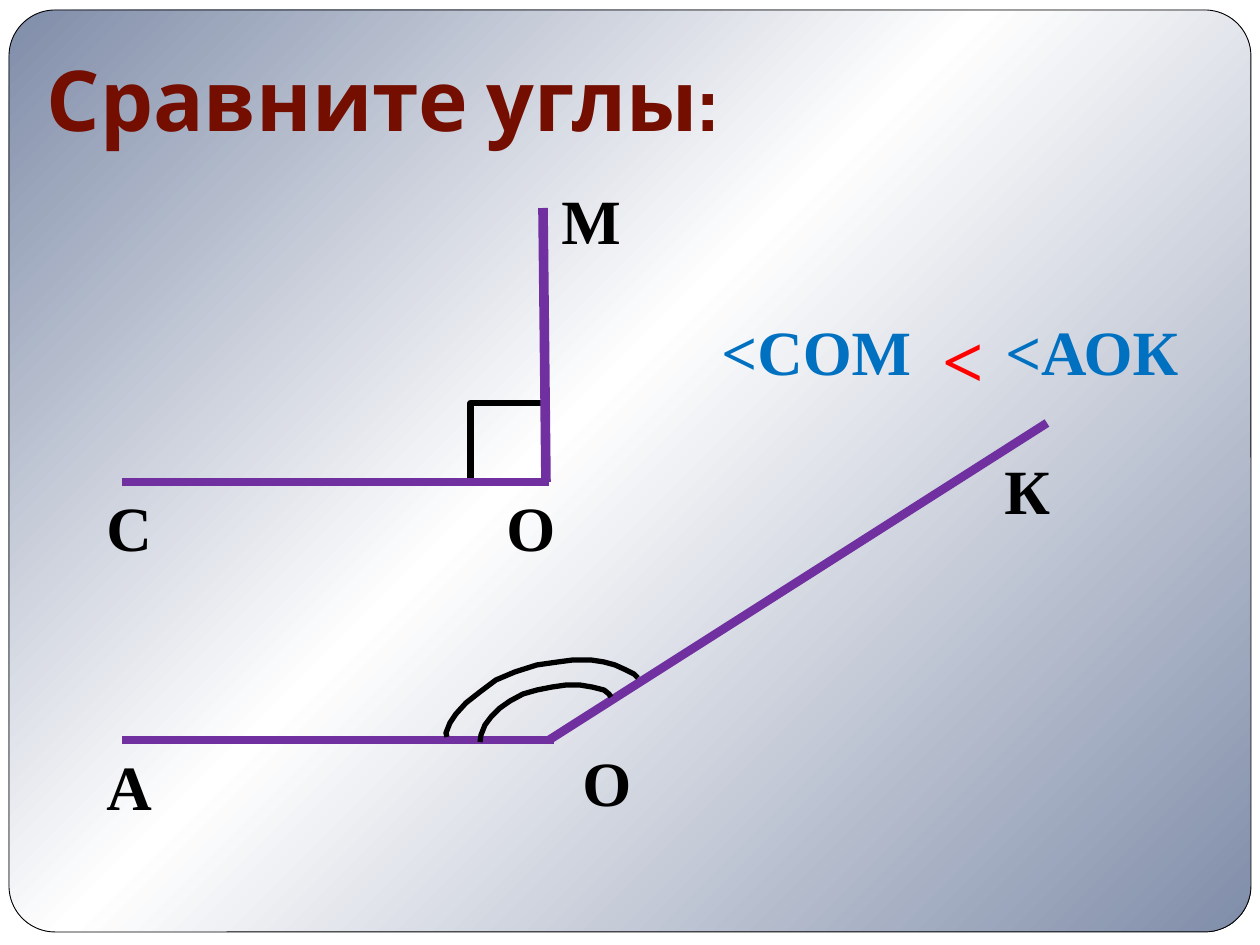
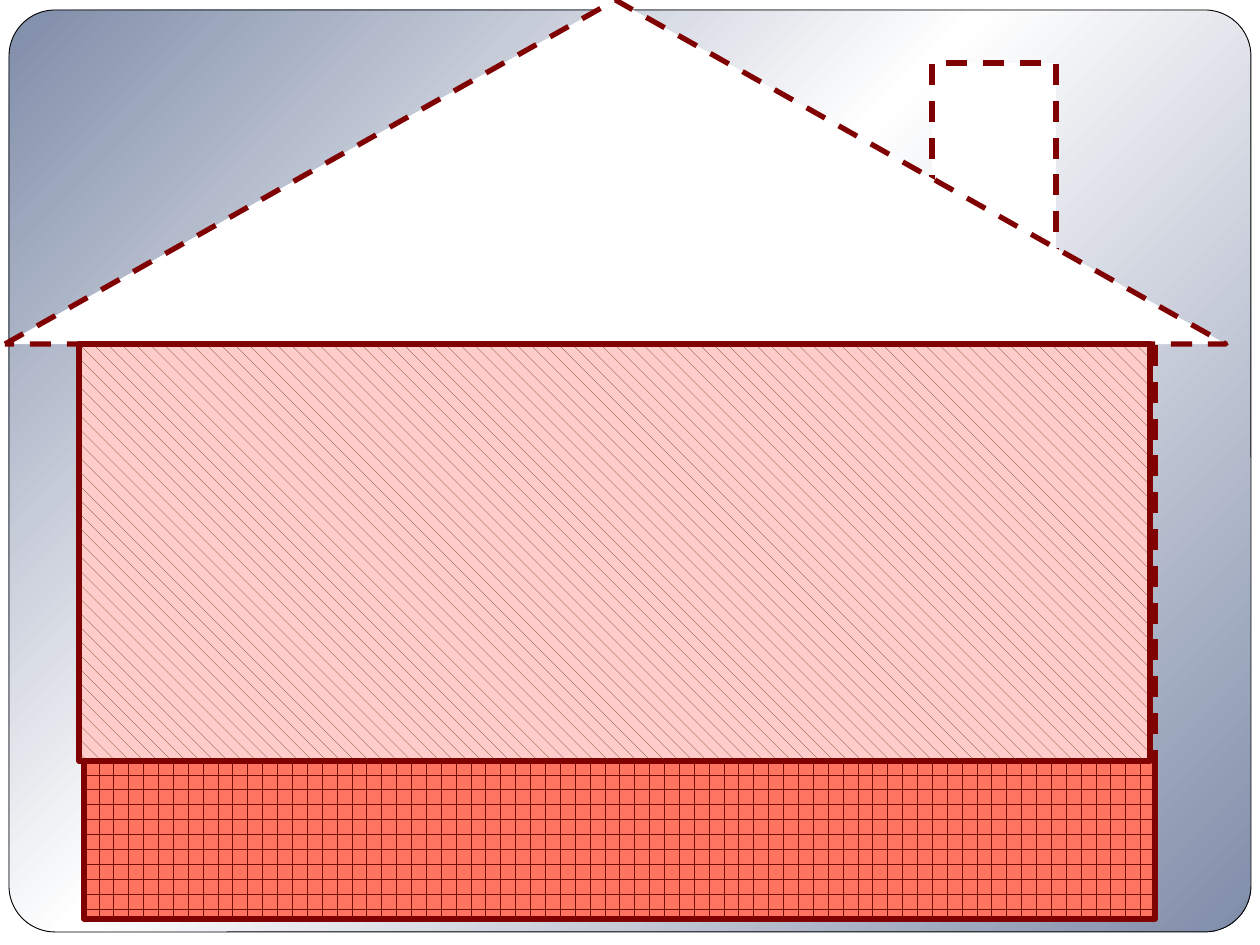
"""Build two geometry slides: comparing angles and a patterned house."""
from copy import deepcopy

from lxml import etree
from pptx import Presentation
from pptx import util as u
from pptx.dml.color import RGBColor
from pptx.enum import dml, shapes, text
from pptx.oxml.ns import qn

SCALE = 914400 / 126
WIDTH, HEIGHT = 1260, 945
WHITE, BLACK, PURPLE, MAROON = "FFFFFF", "000000", "7030A0", "800101"
TITLE_COLOR, BLUE, RED = "730E00", "0070C0", "FF0000"
TITLE_FONT, LABEL_FONT = "Cabin", "Times New Roman"
FRAME_BOX = (9, 10, 1242, 922)
FRAME_STOPS = [(0, "808DA9"), (0.45, WHITE), (1, "808DA9")]

TITLE, TITLE_BOX = "Сравните углы:", (34, 4, 1071, 157)
COMPARISON_BOX = (709, 243, 534, 180)
COMPARISON = [
    ("<СОМ", dict(size=36, color=BLUE)),
    (" ", dict(size=72, color=BLUE)),
    ("<", dict(size=72, color=RED, baseline=-10)),
    (" ", dict(size=48, color=BLUE)),
    ("<АОК", dict(size=36, color=BLUE)),
]
RIGHT_ANGLE_BOX = (471, 403, 75, 79)
RAYS = [
    ((122, 482), (549, 482), 5),
    ((543, 208), (546, 482), 5.5),
    ((122, 740), (554, 740), 5),
    ((1047, 423), (549, 740), 5),
]
LABEL_SIZE = (110, 89)
LABELS = [("М", 549, 175), ("О", 494, 482), ("С", 94, 482),
          ("К", 992, 445), ("А", 94, 741), ("О", 570, 737)]
ARCS = [
    [(480, 742), (481, 735), (485, 725), (491, 717), (500, 708), (510, 701),
     (523, 694), (537, 690), (552, 687), (566, 685), (580, 685), (592, 687),
     (604, 690), (609, 694), (611, 697)],
    [(447, 737), (446, 733), (450, 723), (456, 714), (466, 703), (480, 692),
     (496, 680), (515, 672), (537, 665), (558, 662), (573, 660), (591, 660),
     (604, 662), (615, 665), (626, 670), (634, 674), (638, 678)],
]

BRICK = (dml.MSO_PATTERN.HORIZONTAL_BRICK, "730E00", "FF7461")
SHINGLE = (dml.MSO_PATTERN.SHINGLE, "663300", "FFCCCC")
RECTANGLE = shapes.MSO_SHAPE.RECTANGLE
HOUSE = [
    (RECTANGLE, (932, 63, 124, 218), dict(fill=WHITE, dashed=True)),
    (RECTANGLE, (84, 344, 1071, 417), dict(dashed=True)),
    (shapes.MSO_SHAPE.ISOSCELES_TRIANGLE, (5, 0, 1221, 344),
     dict(fill=WHITE, dashed=True)),
    (RECTANGLE, (84, 760, 1071, 159), dict(pattern=BRICK)),
    (RECTANGLE, (79, 344, 1071, 417), dict(pattern=SHINGLE)),
]


def rgb(value):
    return RGBColor.from_string(value)


def emu(*lengths):
    return [round(length * SCALE) for length in lengths]


def write(paragraph, content, size=36, font=LABEL_FONT, color=BLACK, baseline=0):
    run = paragraph.add_run()
    run.text = content
    run.font.size = u.Pt(size)
    run.font.name = font
    run.font.bold = True
    run.font.color.rgb = rgb(color)
    if baseline:
        run.font._element.set("baseline", str(baseline * 1000))


def style(shape, color, width, fill=None, pattern=None, dashed=False):
    shape.shadow.inherit = False
    shape.line.color.rgb = rgb(color)
    shape.line.width = u.Pt(width)
    if dashed:
        shape.line.dash_style = dml.MSO_LINE.DASH
    if pattern:
        shape.fill.patterned()
        shape.fill.pattern, front, back = pattern
        shape.fill.fore_color.rgb = rgb(front)
        shape.fill.back_color.rgb = rgb(back)
    elif fill:
        shape.fill.solid()
        shape.fill.fore_color.rgb = rgb(fill)
    else:
        shape.fill.background()


def add_text_box(slide, box):
    frame = slide.shapes.add_textbox(*emu(*box)).text_frame
    frame.word_wrap = True
    return frame


def add_frame(slide, master):
    master.background.fill.solid()
    master.background.fill.fore_color.rgb = rgb(WHITE)
    frame = slide.shapes.add_shape(shapes.MSO_SHAPE.ROUNDED_RECTANGLE, *emu(*FRAME_BOX))
    frame.adjustments[0] = 0.05
    style(frame, BLACK, 0.5)
    frame.fill.gradient()
    frame.fill.gradient_angle = 315
    stop_list = frame.element.find(".//" + qn("a:gsLst"))
    stop_list.append(deepcopy(stop_list[-1]))
    for stop, (position, color) in zip(frame.fill.gradient_stops, FRAME_STOPS):
        stop.position = position
        stop.color.rgb = rgb(color)
    frame.element.nvSpPr.cNvPr.set("id", "20")
    master.element.cSld.spTree.insert(2, frame.element)


def add_title(slide):
    title = slide.shapes.title
    title.left, title.top, title.width, title.height = emu(*TITLE_BOX)
    frame = title.text_frame
    frame.auto_size = text.MSO_AUTO_SIZE.NONE
    frame.vertical_anchor = text.MSO_ANCHOR.BOTTOM
    frame.margin_bottom = u.Inches(0.1)
    paragraph = frame.paragraphs[0]
    paragraph.alignment = text.PP_ALIGN.LEFT
    write(paragraph, TITLE, size=48, font=TITLE_FONT, color=TITLE_COLOR)


def add_ray(slide, start, end, width):
    ray = slide.shapes.add_connector(
        shapes.MSO_CONNECTOR.STRAIGHT, *emu(*start, *end))
    ray.line.color.rgb = rgb(PURPLE)
    ray.line.width = u.Pt(width)
    etree.SubElement(ray.element.spPr, qn("a:effectLst"))


def build_angles(slide):
    right_angle = slide.shapes.add_shape(RECTANGLE, *emu(*RIGHT_ANGLE_BOX))
    style(right_angle, BLACK, 4)
    add_title(slide)
    comparison = add_text_box(slide, COMPARISON_BOX).paragraphs[0]
    for content, options in COMPARISON:
        write(comparison, content, **options)
    for ray in RAYS:
        add_ray(slide, *ray)
    for points in ARCS:
        builder = slide.shapes.build_freeform(*points[0], scale=SCALE)
        builder.add_line_segments(points[1:], close=False)
        style(builder.convert_to_shape(), BLACK, 3)
    for letter, left, top in LABELS:
        frame = add_text_box(slide, (left, top, *LABEL_SIZE))
        write(frame.paragraphs[0], letter)


def build_house(slide):
    for kind, box, options in HOUSE:
        style(slide.shapes.add_shape(kind, *emu(*box)), MAROON, 3, **options)


def main():
    presentation = Presentation()
    presentation.slide_width, presentation.slide_height = emu(WIDTH, HEIGHT)
    title_only, blank = presentation.slide_layouts[5], presentation.slide_layouts[6]
    angles = presentation.slides.add_slide(title_only)
    add_frame(angles, presentation.slide_master)
    build_angles(angles)
    build_house(presentation.slides.add_slide(blank))
    presentation.save("out.pptx")


if __name__ == "__main__":
    main()
